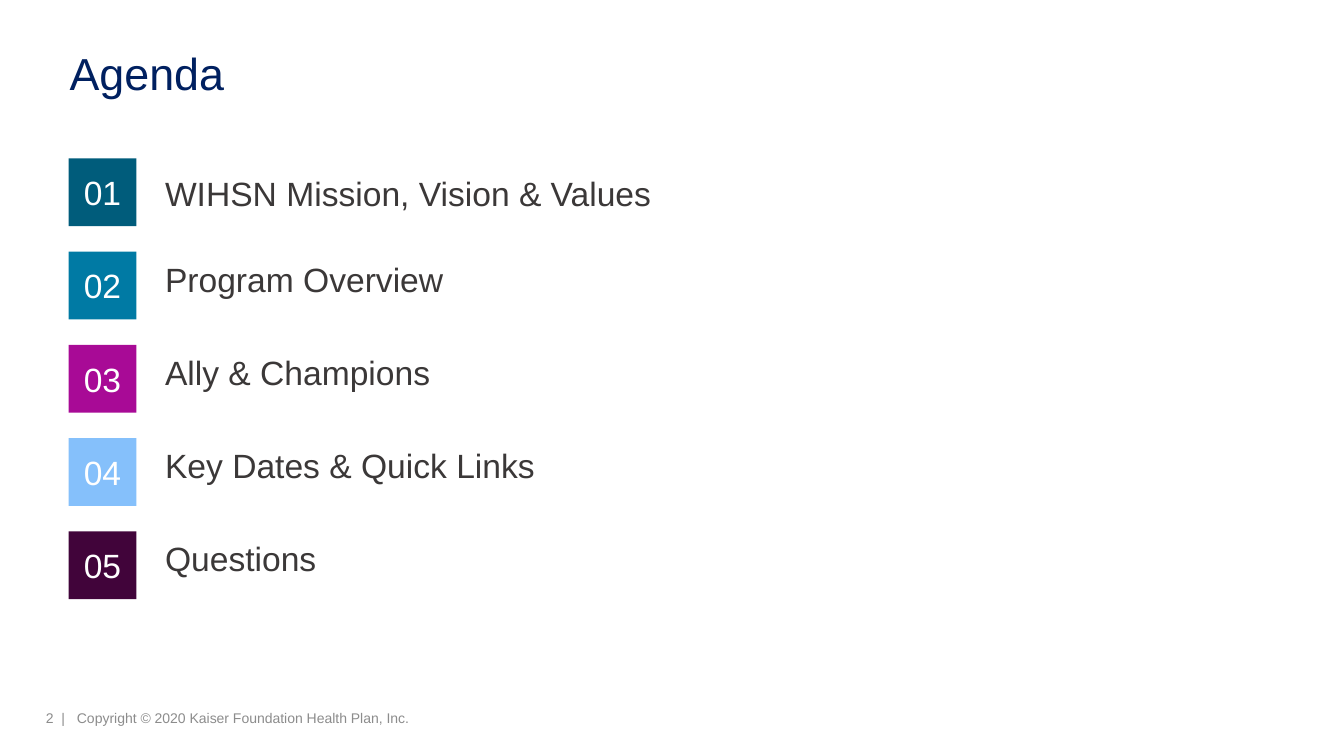
from pptx import Presentation
from pptx.dml.color import RGBColor
from pptx.enum.shapes import MSO_SHAPE
from pptx.enum.text import MSO_ANCHOR, MSO_AUTO_SIZE, PP_ALIGN
from pptx.oxml import parse_xml
from pptx.oxml.ns import nsdecls
from pptx.util import Cm, Pt


def rgb(value):
    return RGBColor.from_string(value)


def write(sp, text, size, color, anchor, align=PP_ALIGN.LEFT):
    """Put one formatted run in the shape and return its paragraph."""
    tf = sp.text_frame
    tf.word_wrap = True
    tf.vertical_anchor = anchor
    p = tf.paragraphs[0]
    p.alignment = align
    r = p.add_run()
    r.text = text
    r.font.name = "Arial"
    r.font.size = Pt(size)
    r.font.color.rgb = rgb(color)
    return p


prs = Presentation()
prs.slide_width, prs.slide_height = Cm(33.87), Cm(19.05)
s = prs.slides.add_slide(prs.slide_layouts[5])

title = s.shapes.title
title.left, title.top, title.width, title.height = Cm(1.5), Cm(0.74), Cm(29), Cm(2.34)
p = write(title, "Agenda", 32, "002060", MSO_ANCHOR.MIDDLE)
p.line_spacing = 0.9

agenda = [
    ("WIHSN Mission, Vision & Values", "005C7B"),
    ("Program Overview", "007AA4"),
    ("Ally & Champions", "A80A96"),
    ("Key Dates & Quick Links", "85C0FB"),
    ("Questions", "41043A"),
]
for i, (topic, color) in enumerate(agenda):
    top = 3.99 + 2.35 * i

    box = s.shapes.add_shape(MSO_SHAPE.RECTANGLE, Cm(1.73), Cm(top), Cm(1.71), Cm(1.71))
    box.shadow.inherit = False
    box.fill.solid()
    box.fill.fore_color.rgb = rgb(color)
    box.line.fill.background()
    write(box, f"{i + 1:02d}", 24, "FFFFFF", MSO_ANCHOR.MIDDLE, PP_ALIGN.CENTER)

    # The first label sits slightly lower beside its number than the others
    drop = 0.25 if i == 0 else 0.05
    label = s.shapes.add_textbox(Cm(3.91), Cm(top + drop), Cm(24.05), Cm(1.28))
    write(label, topic, 24, "3B3838", MSO_ANCHOR.TOP)
    label.text_frame.auto_size = MSO_AUTO_SIZE.SHAPE_TO_FIT_TEXT

footer = s.shapes.add_textbox(Cm(0.91), Cm(17.42), Cm(22.56), Cm(1.02))
p = write(footer, "2\t|\tCopyright © 2020 Kaiser Foundation Health Plan, Inc.",
          10, "8C8C8C", MSO_ANCHOR.BOTTOM)
tabs = "".join(f'<a:tab pos="{Cm(pos)}" algn="l"/>' for pos in (0.39, 0.78))
p._p.get_or_add_pPr().append(parse_xml(f'<a:tabLst {nsdecls("a")}>{tabs}</a:tabLst>'))

prs.save("out.pptx")
